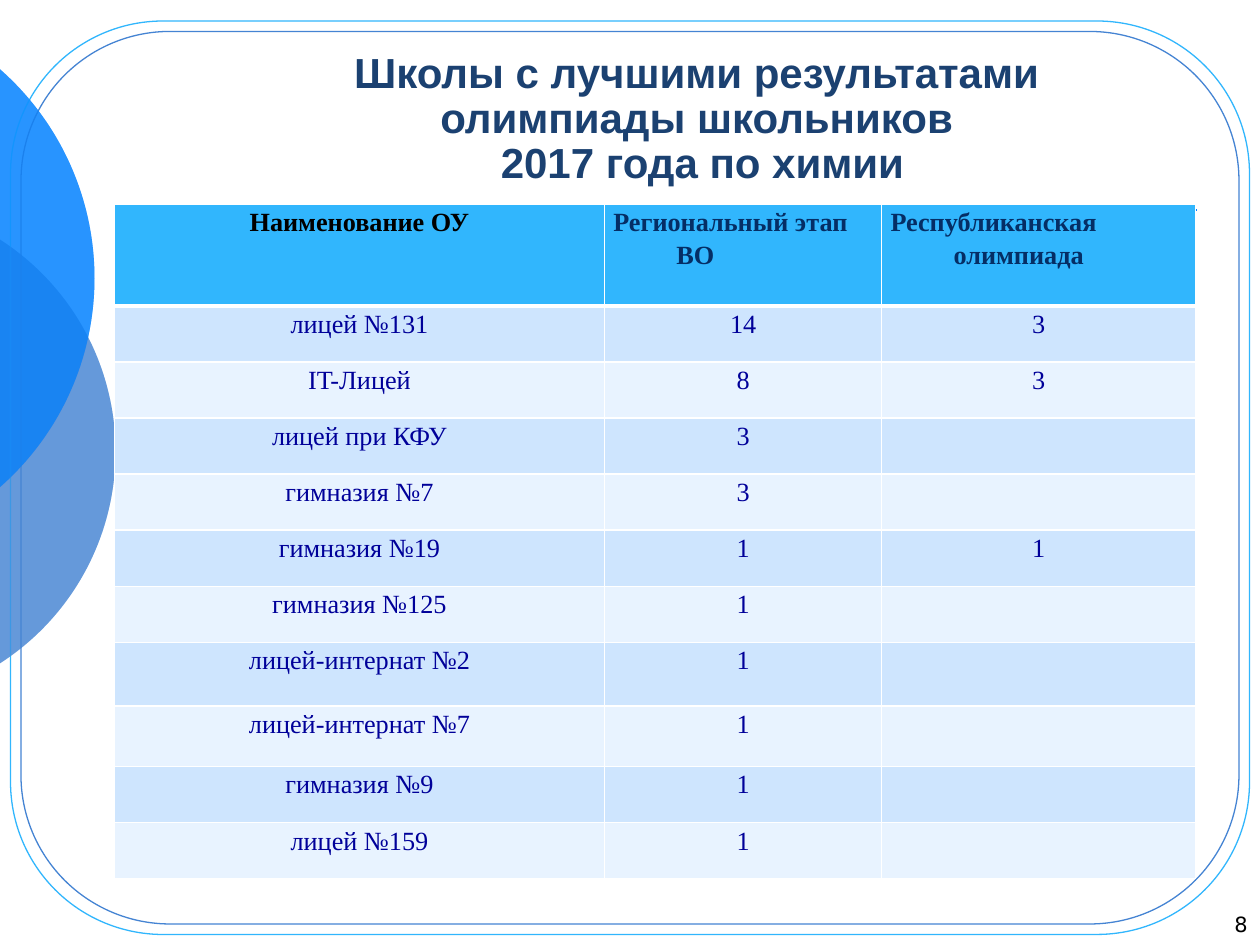
"""Build a slide with a table of schools and their chemistry olympiad results."""
import math
from dataclasses import dataclass

from lxml import etree
from pptx import Presentation
from pptx.dml.color import RGBColor
from pptx.enum.shapes import MSO_CONNECTOR, MSO_SHAPE
from pptx.enum.text import MSO_ANCHOR, PP_ALIGN
from pptx.oxml.ns import qn
from pptx.util import Emu, Inches, Pt

LEFT, CENTER, RIGHT = PP_ALIGN.LEFT, PP_ALIGN.CENTER, PP_ALIGN.RIGHT
MIDDLE, BOTTOM = MSO_ANCHOR.MIDDLE, MSO_ANCHOR.BOTTOM
ROUND_RECT = MSO_SHAPE.ROUNDED_RECTANGLE
STRAIGHT = MSO_CONNECTOR.STRAIGHT

COLS, ROWS = 120, 90
UNIT = Inches(10) // COLS
COLORS = {
    "blue": "4584D3", "azure": "0080FF", "sky": "31B6FD", "title": "1B4171",
    "navy": "052E65", "ink": "000099", "black": "000000", "white": "FFFFFF",
    "odd": "CEE5FE", "even": "E8F3FF",
}


@dataclass(frozen=True)
class Disc:
    left: float
    top: float
    size: float
    color: str
    opacity: int


@dataclass(frozen=True)
class Frame:
    inset: float
    width: float
    height: float
    color: str


@dataclass(frozen=True)
class Label:
    box: tuple[float, float, float, float]
    lines: tuple[str, ...]
    size: float
    font: str
    color: str
    bold: bool
    align: PP_ALIGN
    anchor: MSO_ANCHOR
    spacing: float


@dataclass(frozen=True)
class School:
    name: str
    regional: str
    republican: str = ""
    height: float = 0.445


DISCS = (Disc(-37, 19, 48, "blue", 58), Disc(-44, 0, 53, "azure", 60))
FRAMES = (Frame(1, 118, 87, "sky"), Frame(2, 116, 85, "blue"))
LABELS = (
    Label((18.1, 6.2, 97.6, 10.4),
          ("Школы с лучшими результатами ", "олимпиады школьников ",
           "2017 года по химии"),
          24, "Arial", "title", True, CENTER, MIDDLE, 0.9),
    Label((92, 83.8, 28, 6), ("8",), 12, "DejaVu Sans", "black", False,
          RIGHT, BOTTOM, 1),
)
HEADERS = (("Наименование ОУ", "black", CENTER),
           ("Региональный этап ВО", "navy", LEFT),
           ("Республиканская олимпиада", "navy", LEFT))
SCHOOLS = (
    School("лицей №131", "14", "3"),
    School("IT-Лицей", "8", "3"),
    School("лицей при КФУ", "3"),
    School("гимназия №7", "3"),
    School("гимназия №19", "1", "1"),
    School("гимназия №125", "1"),
    School("лицей-интернат №2", "1", height=0.505),
    School("лицей-интернат №7", "1", height=0.48),
    School("гимназия №9", "1"),
    School("лицей №159", "1"),
)
TABLE_LEFT, TABLE_TOP, HEADER_HEIGHT = 10.9, 19.42, 0.81
COL_WIDTHS = (3.89, 2.2, 2.49)


def grid(n: float) -> Emu:
    """Convert grid steps to a length."""
    return Emu(round(n * UNIT))


def rgb(name: str) -> RGBColor:
    """Look up a colour by name."""
    return RGBColor.from_string(COLORS[name])


def format_runs(p, size: float, font: str, color: str, bold: bool) -> None:
    """Apply one font to every run of a paragraph."""
    for r in p.runs:
        r.font.size, r.font.name, r.font.bold = Pt(size), font, bold
        r.font.color.rgb = rgb(color)


def add_disc(shapes, disc: Disc) -> None:
    """Draw the translucent disc segment right of the slide edge."""
    radius = disc.size / 2
    limit = math.acos(-(disc.left + radius) / radius)
    edge, rise = -disc.left, radius * math.sin(limit)
    k = radius * 4 / 3 * math.tan(limit / 4)
    dx, dy = k * math.sin(limit), k * math.cos(limit)
    start, end = (edge, radius - rise), (edge, radius + rise)
    tip = (disc.size, radius)
    builder = shapes.build_freeform(0, 0, UNIT)
    builder.add_line_segments([(disc.size, disc.size)])
    sp = builder.convert_to_shape()
    sp.left, sp.top = grid(disc.left), grid(disc.top)
    outline = next(sp._element.iter(qn("a:path")))
    for child in list(outline):
        outline.remove(child)
    for tag, points in (
        ("moveTo", (start,)),
        ("cubicBezTo", ((edge + dx, start[1] + dy), (disc.size, radius - k), tip)),
        ("cubicBezTo", ((disc.size, radius + k), (edge + dx, end[1] - dy), end)),
        ("close", ()),
    ):
        step = etree.SubElement(outline, qn(f"a:{tag}"))
        for x, y in points:
            etree.SubElement(step, qn("a:pt"), x=str(grid(x)), y=str(grid(y)))
    outline.set("w", str(grid(disc.size)))
    outline.set("h", str(grid(disc.size)))
    sp.shadow.inherit = False
    sp.fill.solid()
    sp.fill.fore_color.rgb = rgb(disc.color)
    clr = next(sp._element.spPr.iter(qn("a:srgbClr")))
    etree.SubElement(clr, qn("a:alpha"), val=str(disc.opacity * 1000))
    sp.line.fill.background()


def add_frame(shapes, frame: Frame) -> None:
    """Draw a rounded outline."""
    sp = shapes.add_shape(ROUND_RECT, grid(frame.inset), grid(frame.inset + 1),
                          grid(frame.width), grid(frame.height))
    sp.adjustments[0] = 0.167
    sp.shadow.inherit = False
    sp.fill.background()
    sp.line.color.rgb = rgb(frame.color)
    sp.line.width = Pt(0.75)


def add_rule(shapes) -> None:
    """Draw the line under the title."""
    line = shapes.add_connector(STRAIGHT, grid(18), grid(20), grid(114), grid(20))
    line.line.color.rgb = rgb("azure")
    line.line.width = Pt(1)
    etree.SubElement(line._element.spPr, qn("a:effectLst"))


def add_label(shapes, label: Label) -> None:
    """Add a text box."""
    tf = shapes.add_textbox(*map(grid, label.box)).text_frame
    tf.word_wrap, tf.vertical_anchor = True, label.anchor
    tf.text = "\n".join(label.lines)
    for p in tf.paragraphs:
        p.alignment, p.line_spacing = label.align, label.spacing
        format_runs(p, label.size, label.font, label.color, label.bold)


def fill_cell(cell, text: str, color: str, fill: str, align: PP_ALIGN,
              header: bool, top: float, bottom: float) -> None:
    """Set the text, borders and fill of one cell."""
    cell.margin_left = cell.margin_right = Inches(0.07)
    cell.margin_top = cell.margin_bottom = 0
    cell.text = text
    p = cell.text_frame.paragraphs[0]
    p.alignment, p.line_spacing = align, 1.15
    p_pr = p._p.get_or_add_pPr()
    p_pr.set("marL", str(Inches(0.5)))
    p_pr.set("indent", str(-Inches(0.5)))
    format_runs(p, 15, "Times New Roman", color, header)
    tc_pr = cell._tc.get_or_add_tcPr()
    for side, width in (("L", 1), ("R", 1), ("T", top), ("B", bottom)):
        ln = etree.SubElement(tc_pr, qn(f"a:ln{side}"), w=str(Pt(width)))
        solid = etree.SubElement(ln, qn("a:solidFill"))
        etree.SubElement(solid, qn("a:srgbClr"), val=COLORS["white"])
    cell.fill.solid()
    cell.fill.fore_color.rgb = rgb(fill)


def add_results(shapes) -> None:
    """Add the table of schools."""
    heights = [HEADER_HEIGHT, *(school.height for school in SCHOOLS)]
    table = shapes.add_table(len(heights), len(COL_WIDTHS), grid(TABLE_LEFT),
                             grid(TABLE_TOP), Inches(sum(COL_WIDTHS)),
                             Inches(sum(heights))).table
    for col, width in zip(table.columns, COL_WIDTHS):
        col.width = Inches(width)
    for row, height in zip(table.rows, heights):
        row.height = Inches(height)
    for j, (text, color, align) in enumerate(HEADERS):
        fill_cell(table.cell(0, j), text, color, "sky", align, True, 1, 3)
    for i, school in enumerate(SCHOOLS, 1):
        fill, top = ("odd" if i % 2 else "even"), (3 if i == 1 else 1)
        for j, text in enumerate((school.name, school.regional, school.republican)):
            fill_cell(table.cell(i, j), text, "ink", fill, CENTER, False, top, 1)


prs = Presentation()
prs.slide_width, prs.slide_height = grid(COLS), grid(ROWS)
shapes = prs.slides.add_slide(prs.slide_layouts[6]).shapes
for draw, items in ((add_disc, DISCS), (add_frame, FRAMES)):
    for item in items:
        draw(shapes, item)
add_rule(shapes)
for draw, items in ((add_disc, DISCS), (add_label, LABELS[:1])):
    for item in items:
        draw(shapes, item)
add_results(shapes)
add_label(shapes, LABELS[1])
prs.save("out.pptx")
